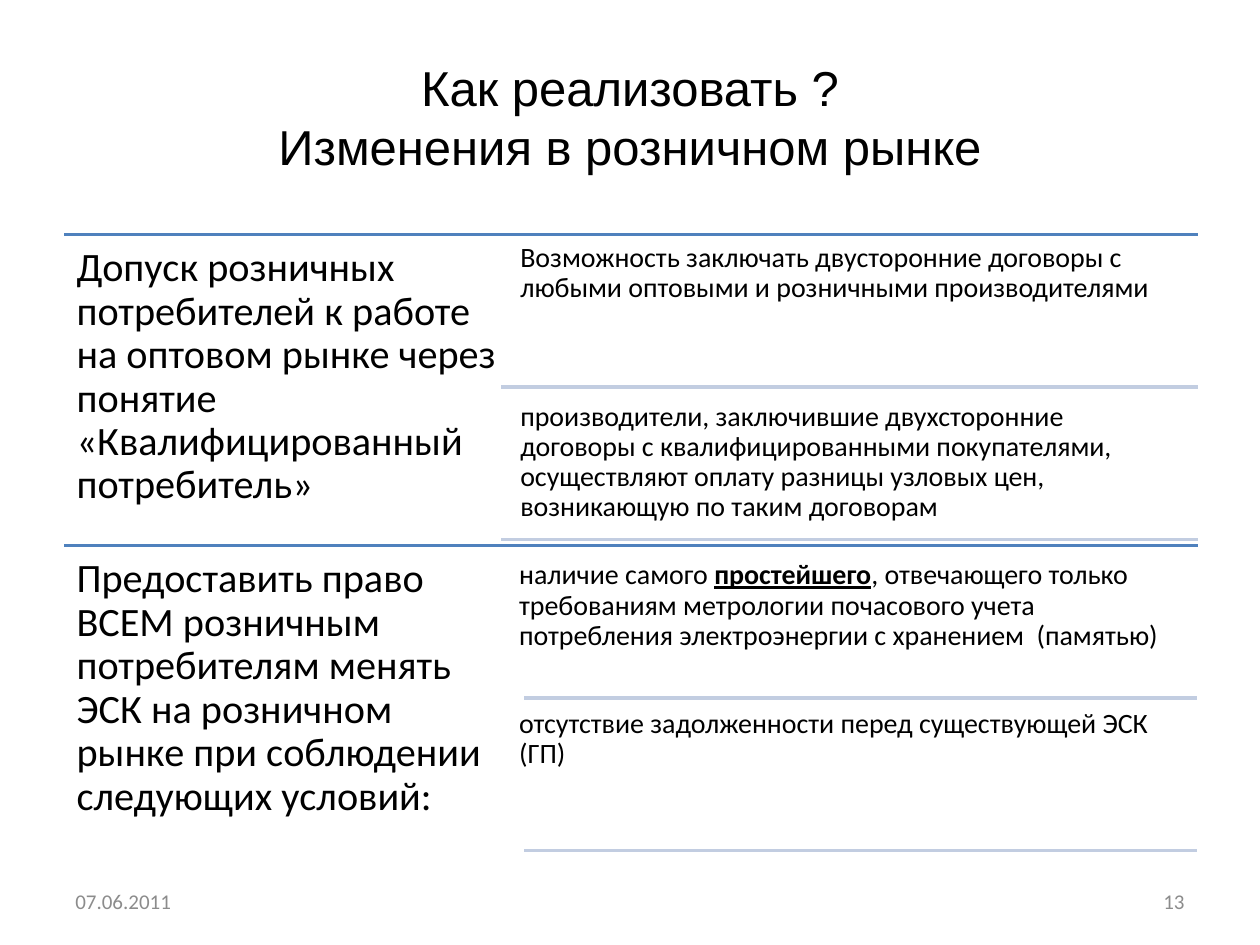
from dataclasses import dataclass

from lxml import etree
from pptx import Presentation
from pptx.dml.color import RGBColor
from pptx.enum.shapes import MSO_CONNECTOR
from pptx.enum.text import MSO_ANCHOR, PP_ALIGN
from pptx.oxml.ns import qn
from pptx.util import Inches, Pt

STRAIGHT = MSO_CONNECTOR.STRAIGHT
TOP, MIDDLE = MSO_ANCHOR.TOP, MSO_ANCHOR.MIDDLE
LEFT, CENTER, RIGHT = PP_ALIGN.LEFT, PP_ALIGN.CENTER, PP_ALIGN.RIGHT

BLACK = RGBColor(0x00, 0x00, 0x00)
GRAY = RGBColor(0x8C, 0x8C, 0x8C)
BLUE = RGBColor(0x4F, 0x81, 0xBD)
PALE_BLUE = RGBColor(0xC2, 0xCD, 0xE1)

MARGIN_LEFT = 0.51
RULE_RIGHT = 9.51
SECTION_HEIGHT = 2.47
DETAIL_HEIGHT = 1.15
DETAIL_STEP = 1.21


@dataclass(frozen=True)
class TextStyle:
    size: float
    font: str = "Calibri"
    color: RGBColor = BLACK
    align: PP_ALIGN = LEFT
    anchor: MSO_ANCHOR = TOP
    inset_x: float = 0.1
    inset_y: float = 0.05
    line_spacing: float = 1.0


@dataclass(frozen=True)
class Detail:
    top: float
    text: str
    emphasis: str = ""


@dataclass(frozen=True)
class Section:
    top: float
    label: str
    label_width: float
    detail_left: float
    detail_width: float
    rule_left: float
    rule_right: float
    details: tuple[Detail, ...]


TITLE = TextStyle(28, font="Arial", align=CENTER, anchor=MIDDLE)
LABEL = TextStyle(23, inset_y=0.1, line_spacing=0.9)
DETAIL = TextStyle(16, inset_x=0.07, inset_y=0.07, line_spacing=0.9)
DATE = TextStyle(12, color=GRAY, anchor=MIDDLE)
NUMBER = TextStyle(12, color=GRAY, align=RIGHT, anchor=MIDDLE)

SECTIONS = (
    Section(
        1.86,
        "Допуск розничных потребителей к работе на оптовом рынке через  понятие "
        "«Квалифицированный потребитель»",
        3.65, 4.06, 5.24, 3.98, RULE_RIGHT,
        (
            Detail(1.86, "Возможность заключать двусторонние договоры с любыми "
                         "оптовыми и розничными производителями"),
            Detail(3.12, "производители, заключившие двухсторонние договоры с "
                         "квалифицированными покупателями, осуществляют оплату "
                         "разницы узловых цен, возникающую по таким договорам"),
        ),
    ),
    Section(
        4.33,
        "Предоставить право ВСЕМ розничным потребителям менять ЭСК на розничном "
        "рынке при соблюдении следующих условий:",
        3.47, 4.05, 5.42, 4.16, 9.5,
        (
            Detail(4.38, "наличие самого простейшего, отвечающего только "
                         "требованиям метрологии почасового учета потребления "
                         "электроэнергии с хранением  (памятью)", "простейшего"),
            Detail(5.56, "отсутствие задолженности перед существующей ЭСК (ГП)"),
        ),
    ),
)


def add_text(page, left: float, top: float, width: float, height: float,
             text: str, style: TextStyle, emphasis: str = "") -> None:
    box = page.shapes.add_textbox(Inches(left), Inches(top), Inches(width), Inches(height))
    frame = box.text_frame
    frame.word_wrap = True
    frame.vertical_anchor = style.anchor
    frame.margin_left = frame.margin_right = Inches(style.inset_x)
    frame.margin_top = frame.margin_bottom = Inches(style.inset_y)
    para = frame.paragraphs[0]
    para.alignment = style.align
    para.line_spacing = style.line_spacing
    if emphasis:
        for part in text.partition(emphasis):
            span = para.add_run()
            span.text = part
            span.font.bold = span.font.underline = part == emphasis
    else:
        para.text = text
    for span in para.runs:
        span.font.name = style.font
        span.font.size = Pt(style.size)
        span.font.color.rgb = style.color


def add_rule(page, left: float, right: float, top: float, color: RGBColor) -> None:
    rule = page.shapes.add_connector(
        STRAIGHT, Inches(left), Inches(top), Inches(right), Inches(top))
    rule.line.color.rgb = color
    rule.line.width = Pt(2)
    etree.SubElement(rule.element.spPr, qn("a:effectLst"))


def add_section(page, section: Section) -> None:
    for index, detail in enumerate(section.details, start=1):
        add_text(page, section.detail_left, detail.top, section.detail_width,
                 DETAIL_HEIGHT, detail.text, DETAIL, detail.emphasis)
        add_rule(page, section.rule_left, section.rule_right,
                 section.top + index * DETAIL_STEP, PALE_BLUE)
    add_rule(page, MARGIN_LEFT, RULE_RIGHT, section.top, BLUE)
    add_text(page, MARGIN_LEFT, section.top, section.label_width, SECTION_HEIGHT,
             section.label, LABEL)


def main() -> None:
    deck = Presentation()
    deck.slide_width, deck.slide_height = Inches(10), Inches(7.5)
    page = deck.slides.add_slide(deck.slide_layouts[6])
    add_text(page, 0.5, 0.3, 9, 1.25,
             "Как реализовать ?\nИзменения в розничном рынке", TITLE)
    for section in SECTIONS:
        add_section(page, section)
    add_text(page, 0.5, 6.95, 2.33, 0.4, "07.06.2011", DATE)
    add_text(page, 7.17, 6.95, 2.33, 0.4, "13", NUMBER)
    deck.save("out.pptx")


if __name__ == "__main__":
    main()
